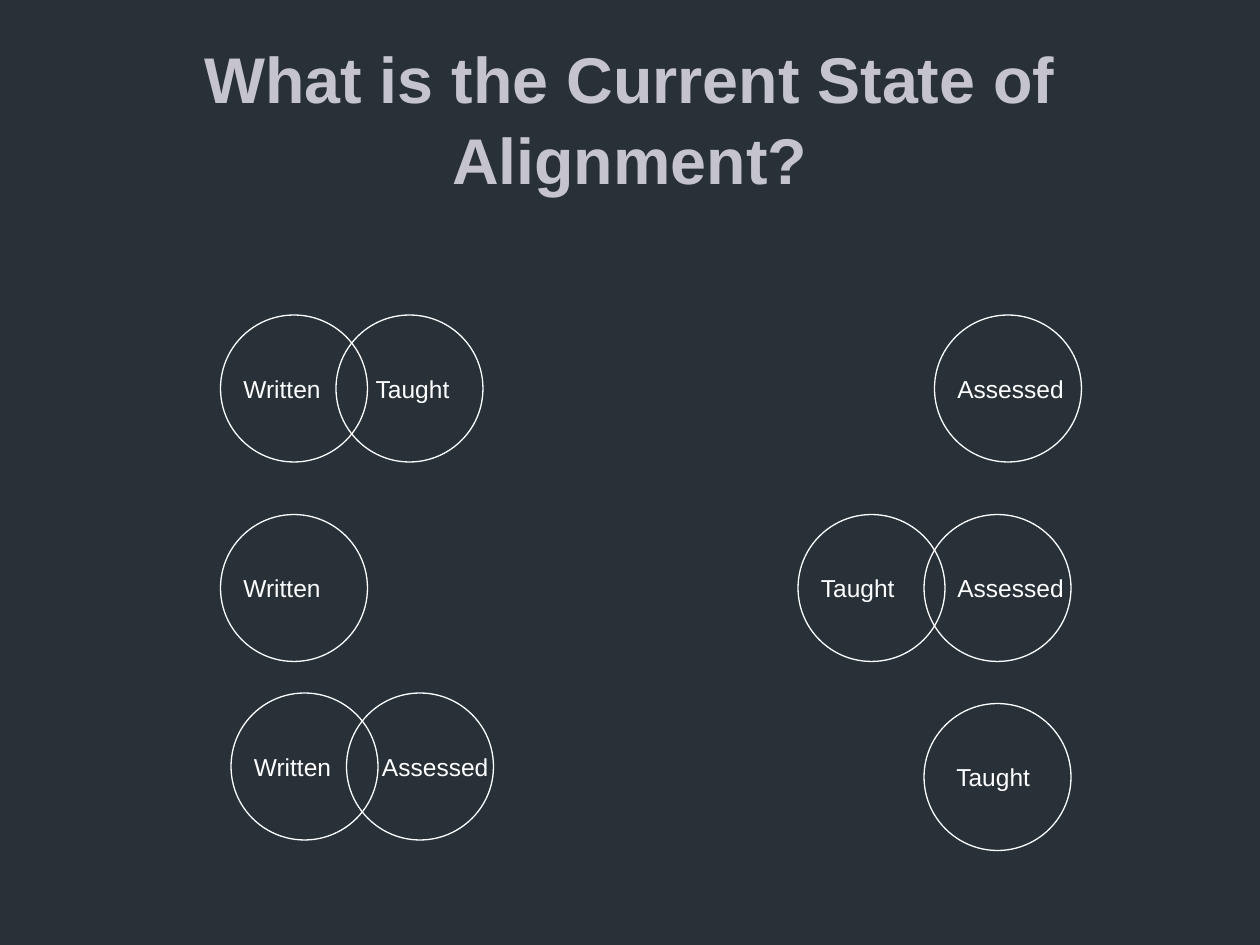
from pptx import Presentation
from pptx.dml.color import RGBColor
from pptx.enum.shapes import MSO_SHAPE
from pptx.enum.text import MSO_ANCHOR, MSO_AUTO_SIZE, PP_ALIGN
from pptx.util import Inches, Pt

BACKGROUND, TITLE_COLOR, WHITE = "283138", "C5C4CC", "FFFFFF"
CELL = Inches(10) / 120  # the slide is a grid of 120 columns by 90 rows
DIAMETER = 14
LABEL_DROP, LABEL_WIDTH, LABEL_HEIGHT = 5, 13, 4

# label, circle column, circle row, label column
curricula = [
    ("Written", 21, 30, 22),
    ("Taught", 32, 30, 34.6),
    ("Assessed", 89, 30, 90),
    ("Written", 21, 49, 22),
    ("Taught", 76, 49, 77),
    ("Assessed", 88, 49, 90),
    ("Written", 22, 66, 23),
    ("Assessed", 33, 66, 35.2),
    ("Taught", 88, 67, 89.9),
]


def color(hex_value):
    return RGBColor.from_string(hex_value)


def cells(*counts):
    """Convert grid counts to slide lengths."""
    return [round(count * CELL) for count in counts]


prs = Presentation()
prs.slide_width, prs.slide_height = cells(120, 90)
slide = prs.slides.add_slide(prs.slide_layouts[5])
slide.background.fill.solid()
slide.background.fill.fore_color.rgb = color(BACKGROUND)

title = slide.shapes.title
title.left, title.top, title.width, title.height = cells(6, 3.6, 108, 15)
title.text_frame.text = "What is the Current State of Alignment?"
title.text_frame.auto_size = MSO_AUTO_SIZE.NONE
title.text_frame.vertical_anchor = MSO_ANCHOR.MIDDLE
heading = title.text_frame.paragraphs[0]
heading.alignment = PP_ALIGN.CENTER
heading.line_spacing = 1.05
heading.font.name = "Arial"
heading.font.size = Pt(36.9)
heading.font.bold = True
heading.font.color.rgb = color(TITLE_COLOR)

for _, column, row, _ in curricula:
    circle = slide.shapes.add_shape(
        MSO_SHAPE.OVAL, *cells(column, row, DIAMETER, DIAMETER))
    circle.shadow.inherit = False
    circle.fill.background()
    circle.line.color.rgb = color(WHITE)
    circle.line.width = Pt(0.75)

for name, _, row, label_column in curricula:
    label = slide.shapes.add_textbox(
        *cells(label_column, row + LABEL_DROP, LABEL_WIDTH, LABEL_HEIGHT))
    label.text_frame.word_wrap = True
    label.text_frame.text = name
    caption = label.text_frame.paragraphs[0]
    caption.font.name = "Arial"
    caption.font.size = Pt(14)
    caption.font.color.rgb = color(WHITE)

prs.save("out.pptx")
